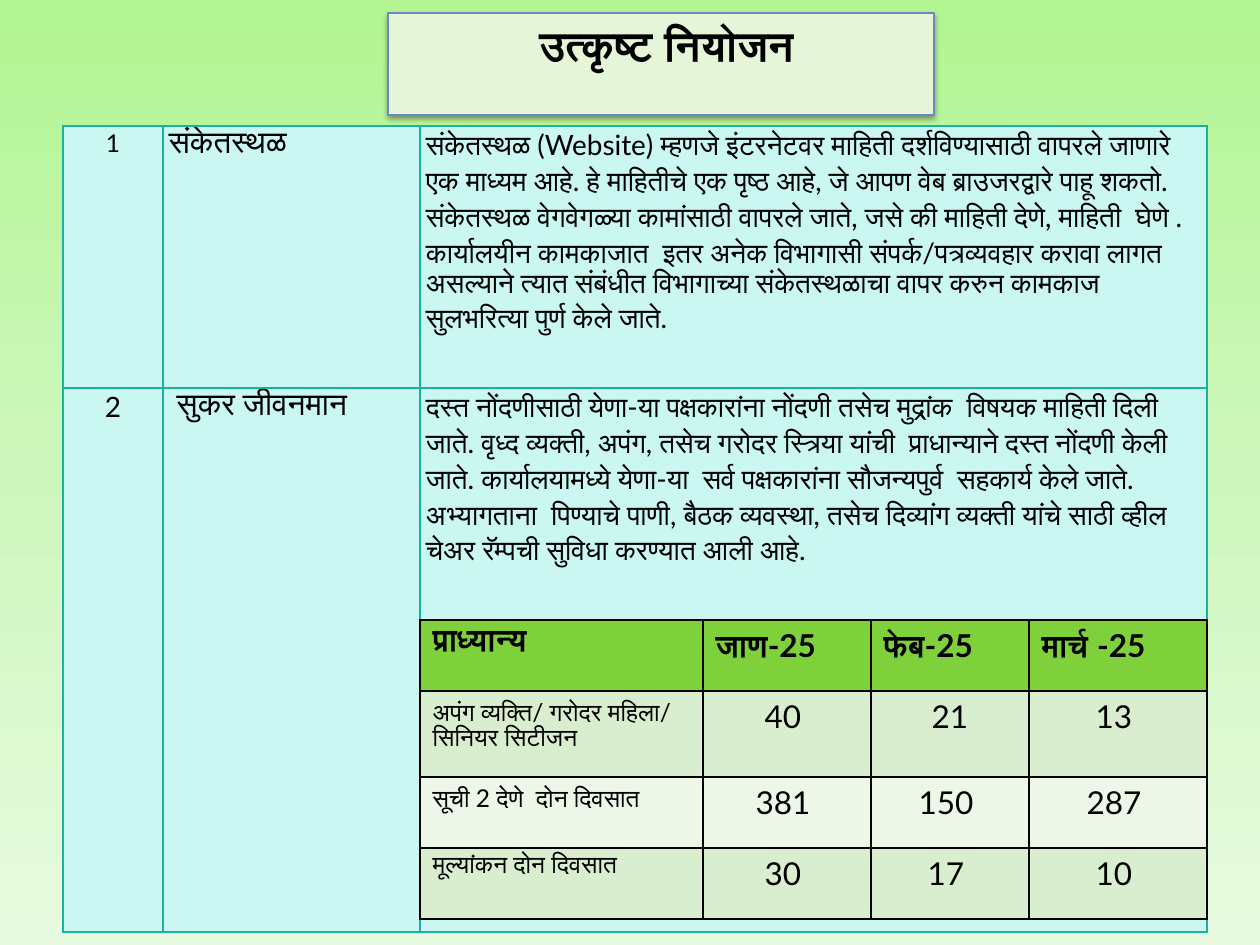
import copy
import pptx
import pptx.dml.color
import pptx.enum.text
import pptx.oxml
import pptx.oxml.ns
import pptx.util

PX = 914400 // 126
FONT = "Lato"
BACKGROUND = [(0, "B2F592"), (0.5, "CEF7BD"), (1, "E7FADF")]
TITLE = " उत्कृष्ट नियोजन"

TOPICS = [
    [("1", 14), ("संकेतस्थळ", 18), (
        "संकेतस्थळ (Website) म्हणजे इंटरनेटवर माहिती दर्शविण्यासाठी वापरले जाणारे एक माध्यम आहे. "
        "हे माहितीचे एक पृष्ठ आहे, जे आपण वेब ब्राउजरद्वारे पाहू शकतो. "
        "संकेतस्थळ वेगवेगळ्या कामांसाठी वापरले जाते, जसे की माहिती देणे, माहिती  घेणे .\n"
        "कार्यालयीन कामकाजात  इतर अनेक विभागासी संपर्क/पत्रव्यवहार करावा लागत असल्याने "
        "त्यात संबंधीत विभागाच्या संकेतस्थळाचा वापर करुन कामकाज सुलभरित्या पुर्ण केले जाते.", 16)],
    [("2", 16), (" सुकर जीवनमान", 18), (
        "दस्त नोंदणीसाठी येणा-या पक्षकारांना नोंदणी तसेच मुद्रांक  विषयक माहिती दिली जाते. "
        "वृध्द व्यक्ती, अपंग, तसेच गरोदर स्त्रिया यांची  प्राधान्याने दस्त नोंदणी केली जाते. "
        "कार्यालयामध्ये येणा-या  सर्व पक्षकारांना सौजन्यपुर्व  सहकार्य केले जाते. "
        "अभ्यागताना  पिण्याचे पाणी, बैठक व्यवस्था, तसेच दिव्यांग व्यक्ती यांचे साठी "
        "व्हील चेअर रॅम्पची सुविधा करण्यात आली आहे.", 16)],
]
PRIORITY = [
    ["प्राध्यान्य", "जाण-25", "फेब-25", "मार्च -25"],
    ["अपंग व्यक्ति/ गरोदर महिला/\nसिनियर सिटीजन", "40 ", "21", "13 "],
    ["सूची 2 देणे  दोन दिवसात", "381 ", "150 ", "287 "],
    ["मूल्यांकन दोन दिवसात", "30 ", "17 ", "10 "],
]
PRIORITY_FILLS = ["7FD13B", "D8EECE", "ECF7E8", "D8EECE"]


def rgb(color):
    return pptx.dml.color.RGBColor.from_string(color)


def write(tf, text, size=16, bold=False, center=False, spacing=None):
    align = pptx.enum.text.PP_ALIGN
    for i, line in enumerate(text.split("\n")):
        p = tf.add_paragraph() if i else tf.paragraphs[0]
        p.alignment = align.CENTER if center else align.LEFT
        p.line_spacing = spacing
        r = p.add_run()
        r.text = line
        r.font.name, r.font.size, r.font.bold = FONT, pptx.util.Pt(size), bold
        r.font.color.rgb = rgb("000000")


def style_cell(cell, fill, border):
    cell.fill.solid()
    cell.fill.fore_color.rgb = rgb(fill)
    ns = pptx.oxml.ns.nsdecls("a")
    for i, side in enumerate("LRTB"):
        cell._tc.get_or_add_tcPr().insert(i, pptx.oxml.parse_xml(
            f'<a:ln{side} {ns} w="12700"><a:solidFill><a:srgbClr val="{border}"/>'
            f'</a:solidFill></a:ln{side}>'))


def add_grid(s, left, top, widths, heights):
    frame = s.shapes.add_table(len(heights), len(widths), left * PX, top * PX,
                               sum(widths) * PX, sum(heights) * PX)
    table = frame.table
    table.first_row = table.horz_banding = False
    for column, width in zip(table.columns, widths):
        column.width = width * PX
    for row, height in zip(table.rows, heights):
        row.height = height * PX
    return table


def paint_background(s):
    fill = s.background.fill
    fill.gradient()
    fill.gradient_angle = 270
    first = next(s._element.iter(pptx.oxml.ns.qn("a:gs")))
    if len(fill.gradient_stops) < len(BACKGROUND):
        first.addnext(copy.deepcopy(first))
    for stop, (position, color) in zip(fill.gradient_stops, BACKGROUND):
        stop.position = position
        stop.color.rgb = rgb(color)


def add_title(s):
    sp = s.shapes.title
    sp.left, sp.top, sp.width, sp.height = [v * PX for v in (388, 13, 546, 102)]
    sp.fill.solid()
    sp.fill.fore_color.rgb = rgb("E5F6D8")
    sp.line.color.rgb = rgb("6E86C6")
    sp.line.width = pptx.util.Pt(0.75)
    sp._element.spPr.append(pptx.oxml.parse_xml(
        f'<a:effectLst {pptx.oxml.ns.nsdecls("a")}>'
        '<a:outerShdw blurRad="39370" dist="20320" dir="5400000" rotWithShape="0">'
        '<a:srgbClr val="000000"><a:alpha val="38000"/></a:srgbClr>'
        '</a:outerShdw></a:effectLst>'))
    sp.text_frame.vertical_anchor = pptx.enum.text.MSO_ANCHOR.TOP
    sp.text_frame.word_wrap = True
    write(sp.text_frame, TITLE, size=24, bold=True, center=True)


def add_topics(s):
    table = add_grid(s, 63, 126, [100, 257, 787], [262, 544])
    for i, row in enumerate(TOPICS):
        for j, (text, size) in enumerate(row):
            cell = table.cell(i, j)
            cell.margin_left = cell.margin_right = 6 * PX
            cell.margin_top = cell.margin_bottom = 0
            style_cell(cell, "CAF7F1", "1AB39F")
            write(cell.text_frame, text, size=size, center=j == 0, spacing=1.07)


def add_priority(s):
    table = add_grid(s, 420, 620, [283, 168, 158, 178], [71, 86, 71, 71])
    for i, (row, fill) in enumerate(zip(PRIORITY, PRIORITY_FILLS)):
        for j, text in enumerate(row):
            cell = table.cell(i, j)
            style_cell(cell, fill, "000000")
            write(cell.text_frame, text, size=14 if i and j == 0 else 18,
                  bold=i == 0, center=i > 0 and j > 0)


def main():
    prs = pptx.Presentation()
    prs.slide_width, prs.slide_height = 1260 * PX, 945 * PX
    s = prs.slides.add_slide(prs.slide_layouts[5])
    paint_background(s)
    add_topics(s)
    add_title(s)
    add_priority(s)
    prs.save("out.pptx")


if __name__ == "__main__":
    main()
